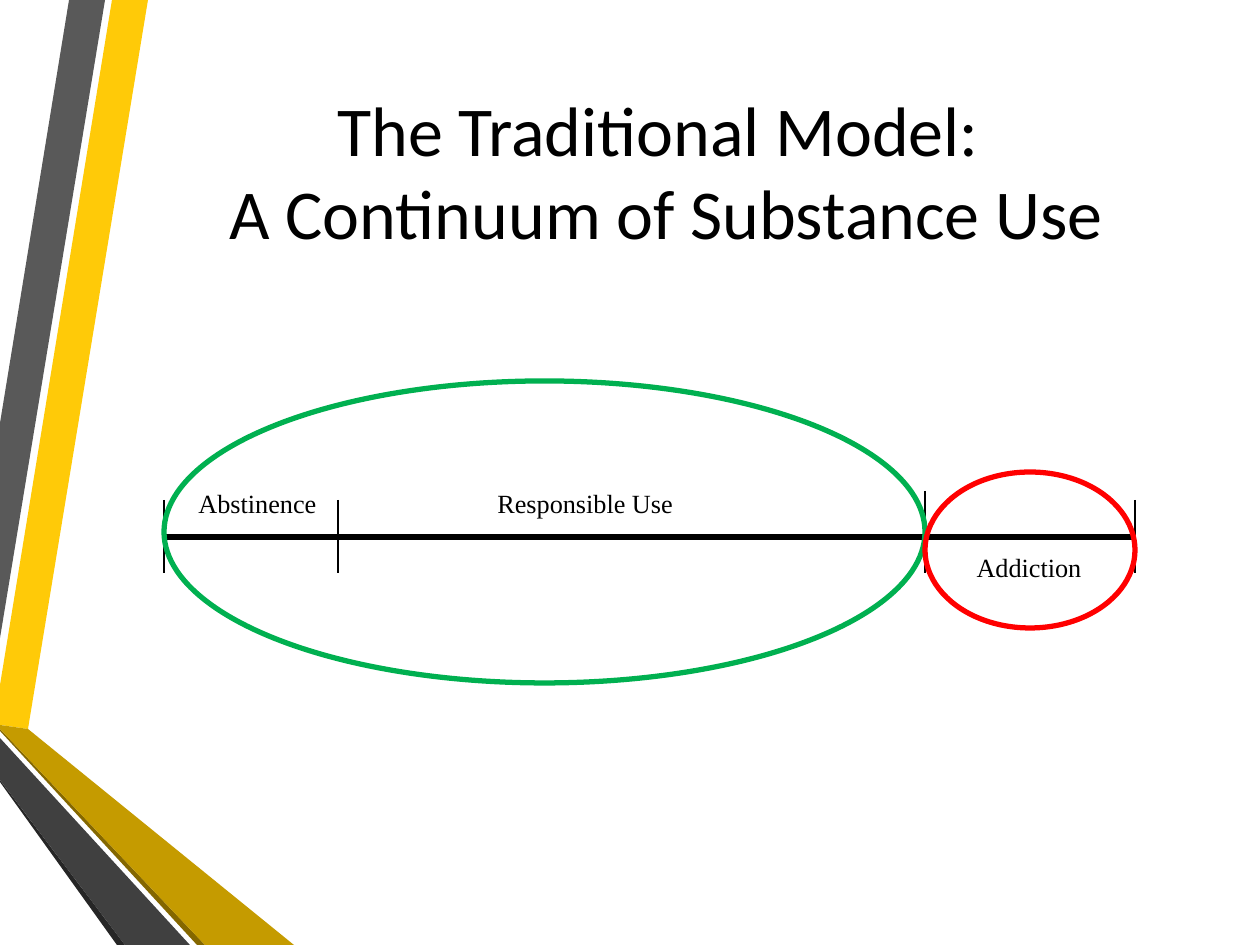
from dataclasses import dataclass

from lxml.etree import SubElement
from pptx import Presentation
from pptx.dml.color import RGBColor
from pptx.enum.shapes import MSO_CONNECTOR, MSO_SHAPE
from pptx.enum.text import MSO_ANCHOR, PP_ALIGN
from pptx.oxml.ns import qn
from pptx.util import Emu, Pt

EMU_PER_PX = 914400 / 126


@dataclass(frozen=True)
class Theme:
    ink: str = "000000"
    healthy: str = "00B050"
    addicted: str = "FF0000"
    yellow: str = "FFCA08"
    gold: str = "C59B00"
    dark_gold: str = "846700"
    gray: str = "595959"
    dark_gray: str = "404040"
    charcoal: str = "262626"
    title_font: str = "Calibri"
    label_font: str = "Times New Roman"
    title_size: float = 40
    label_size: float = 15
    thick: float = 3
    thin: float = 0.75


THEME = Theme()


@dataclass(frozen=True)
class Box:
    left: int
    top: int
    width: int
    height: int

    def emu(self) -> list[Emu]:
        return [px(v) for v in (self.left, self.top, self.width, self.height)]


@dataclass(frozen=True)
class Ribbon:
    color: str
    points: tuple[tuple[int, int], ...]


@dataclass(frozen=True)
class Label:
    text: str
    box: Box
    align: PP_ALIGN = PP_ALIGN.LEFT


@dataclass(frozen=True)
class Zone:
    box: Box
    color: str


@dataclass(frozen=True)
class Line:
    start: tuple[int, int]
    end: tuple[int, int]
    weight: float = THEME.thin


AXIS_Y, TICK_TOP, TICK_BOTTOM = 537, 500, 573
START, USE_START, ADDICTION_START, END = 164, 338, 925, 1135

RIBBONS = (
    Ribbon(THEME.yellow, ((0, 685), (0, 725), (28, 729), (148, 0), (112, 0))),
    Ribbon(THEME.gray, ((105, 0), (69, 0), (0, 423), (0, 638))),
    Ribbon(THEME.charcoal, ((0, 780), (0, 782), (117, 945), (125, 945))),
    Ribbon(THEME.dark_gold, ((0, 729), (0, 731), (197, 945), (205, 945))),
    Ribbon(THEME.gold, ((0, 729), (205, 945), (294, 945), (28, 729), (0, 725))),
    Ribbon(THEME.dark_gray, ((0, 780), (125, 945), (190, 945), (0, 738))),
)
LINES = (
    Line((START, AXIS_Y), (END, AXIS_Y), THEME.thick),
    *(Line((x, TICK_TOP), (x, TICK_BOTTOM)) for x in (START, USE_START, END)),
    Line((ADDICTION_START, 491), (ADDICTION_START, TICK_BOTTOM)),
)
ZONES = (
    Zone(Box(START, 381, ADDICTION_START - START, 302), THEME.healthy),
    Zone(Box(ADDICTION_START, 472, END - ADDICTION_START, 156), THEME.addicted),
)
LABELS = (
    Label("Abstinence", Box(186, 481, 146, 44)),
    Label("Responsible Use", Box(485, 481, 375, 52)),
    Label("Addiction", Box(942, 545, 174, 52), PP_ALIGN.CENTER),
)


def px(length: int) -> Emu:
    return Emu(round(length * EMU_PER_PX))


def rgb(color: str) -> RGBColor:
    return RGBColor.from_string(color)


def write_text(frame, text: str, *, font: str, size: float,
               align: PP_ALIGN = PP_ALIGN.LEFT,
               anchor: MSO_ANCHOR = MSO_ANCHOR.TOP) -> None:
    frame.word_wrap = True
    frame.vertical_anchor = anchor
    paragraph = frame.paragraphs[0]
    paragraph.alignment = align
    for index, line in enumerate(text.split("\n")):
        if index:
            paragraph.add_line_break()
        run = paragraph.add_run()
        run.text = line
        run.font.name = font
        run.font.size = Pt(size)
        run.font.color.rgb = rgb(THEME.ink)


def draw_ribbon(slide, ribbon: Ribbon) -> None:
    first, *rest = ribbon.points
    builder = slide.shapes.build_freeform(*first, scale=EMU_PER_PX)
    builder.add_line_segments(rest, close=True)
    band = builder.convert_to_shape()
    band.shadow.inherit = False
    band.fill.solid()
    band.fill.fore_color.rgb = rgb(ribbon.color)
    band.line.fill.background()


def draw_line(slide, line: Line) -> None:
    ends = [px(v) for v in (*line.start, *line.end)]
    connector = slide.shapes.add_connector(MSO_CONNECTOR.STRAIGHT, *ends)
    connector.line.color.rgb = rgb(THEME.ink)
    connector.line.width = Pt(line.weight)
    SubElement(connector.line._get_or_add_ln().getparent(), qn("a:effectLst"))


def draw_zone(slide, zone: Zone) -> None:
    ellipse = slide.shapes.add_shape(MSO_SHAPE.OVAL, *zone.box.emu())
    ellipse.shadow.inherit = False
    ellipse.fill.background()
    ellipse.line.color.rgb = rgb(zone.color)
    ellipse.line.width = Pt(THEME.thick)


def draw_label(slide, label: Label) -> None:
    frame = slide.shapes.add_textbox(*label.box.emu()).text_frame
    write_text(frame, label.text, font=THEME.label_font,
               size=THEME.label_size, align=label.align)


def main() -> None:
    deck = Presentation()
    deck.slide_width, deck.slide_height = px(1260), px(945)
    slide = deck.slides.add_slide(deck.slide_layouts[5])

    # Ribbons along the left edge
    for ribbon in RIBBONS:
        draw_ribbon(slide, ribbon)

    # Title
    title = slide.shapes.title
    title.left, title.top, title.width, title.height = Box(135, 63, 1062, 214).emu()
    write_text(title.text_frame, "The Traditional Model: \nA Continuum of Substance Use",
               font=THEME.title_font, size=THEME.title_size,
               align=PP_ALIGN.CENTER, anchor=MSO_ANCHOR.MIDDLE)

    # Continuum: axis and ticks, zones, labels
    for line in LINES:
        draw_line(slide, line)
    for zone in ZONES:
        draw_zone(slide, zone)
    for label in LABELS:
        draw_label(slide, label)

    deck.save("out.pptx")


if __name__ == "__main__":
    main()
